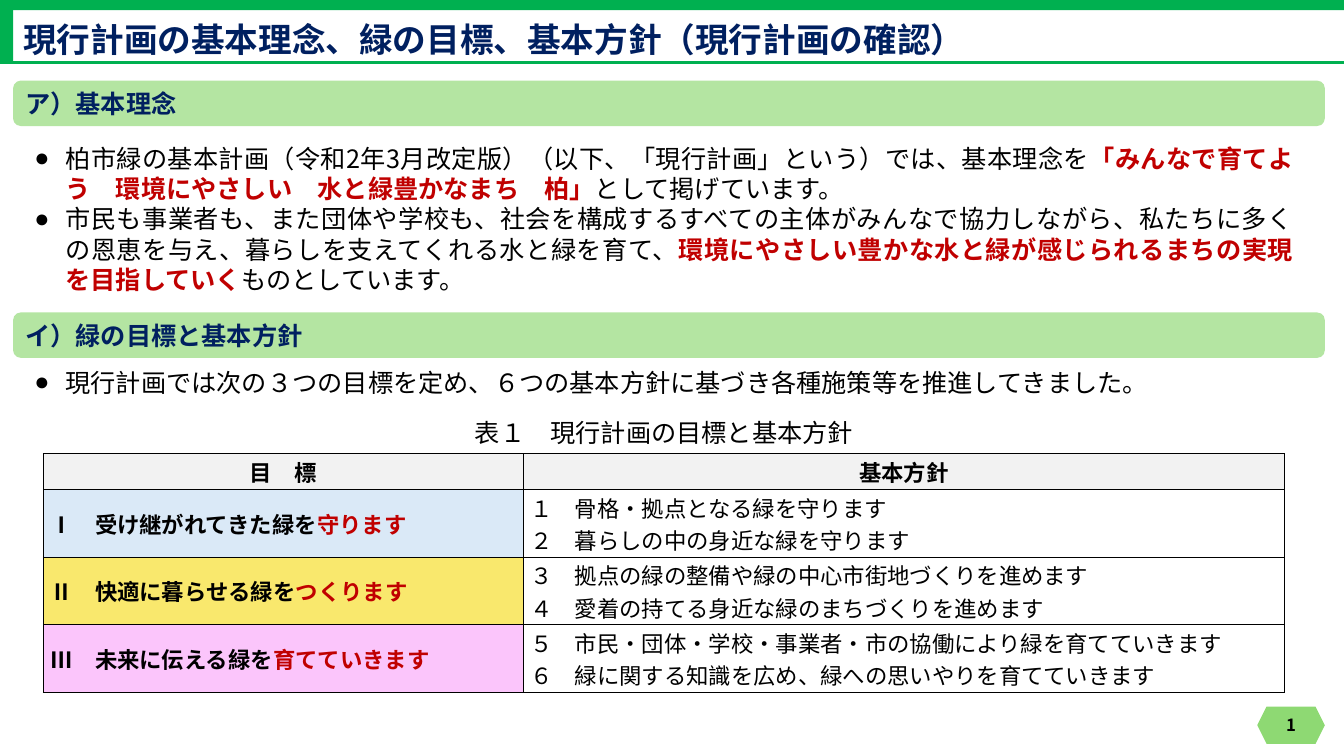
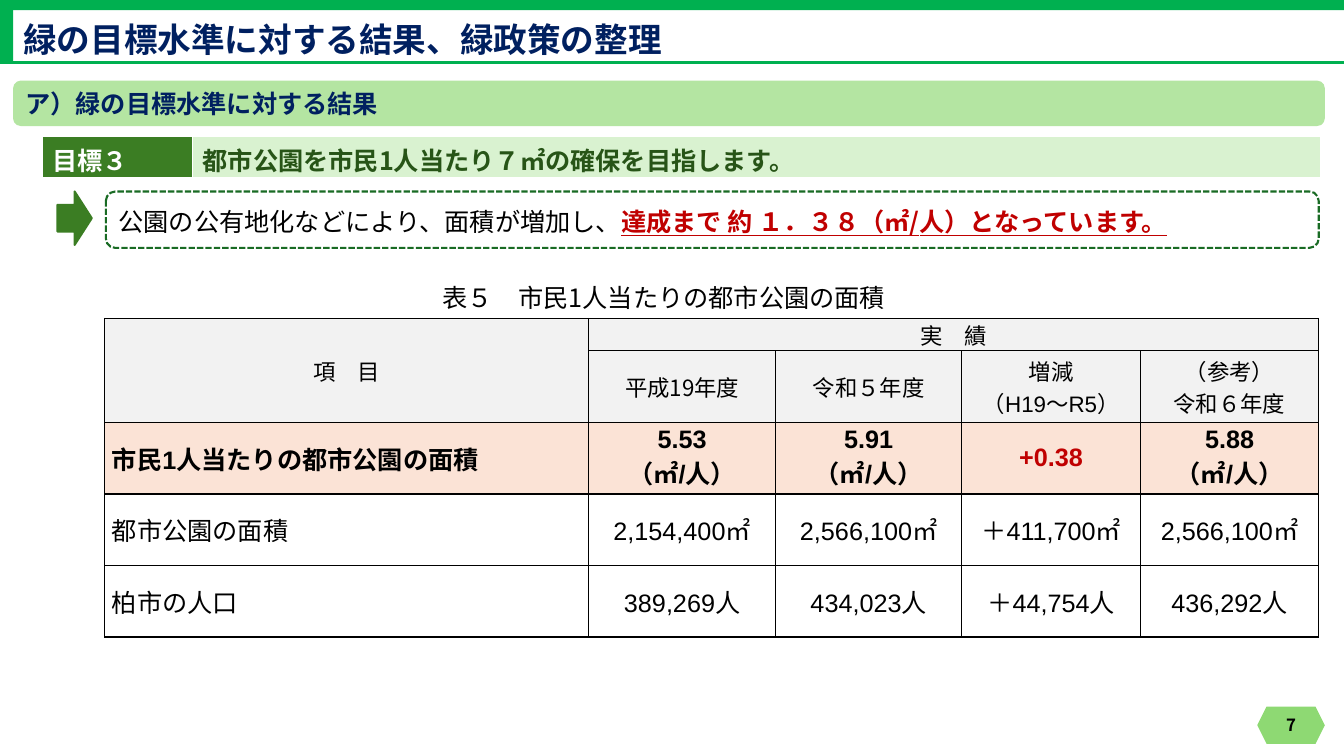
from lxml import etree
from pptx import Presentation
from pptx import util as u
from pptx.dml.color import RGBColor
from pptx.enum import dml, shapes, text
from pptx.oxml.ns import qn

JAPANESE, LATIN = "Noto Sans CJK JP", "Arial"
GREEN, DARK_GREEN, NAVY = "00B050", "3B7D23", "002060"
BLACK, WHITE, RED = "000000", "FFFFFF", "C00000"
PALE_GREEN, GREY, PEACH = "B4E5A2", "F2F2F2", "FBE3D6"
LEFT, CENTER, JUSTIFY = text.PP_ALIGN.LEFT, text.PP_ALIGN.CENTER, text.PP_ALIGN.JUSTIFY
SHAPE = shapes.MSO_SHAPE
rgb = RGBColor.from_string


def write(frame, content, size=18, color=BLACK, bold=False, align=LEFT, latin=JAPANESE):
    """Write one paragraph per line; pieces between bars become red and bold."""
    frame.word_wrap = True
    frame.auto_size = text.MSO_AUTO_SIZE.NONE
    for number, line in enumerate(content.split("\n")):
        paragraph = frame.add_paragraph() if number else frame.paragraphs[0]
        paragraph.alignment = align
        paragraph.space_before = u.Pt(0)
        for position, piece in enumerate(line.split("|")):
            if not piece:
                continue
            emphasis = position % 2 == 1
            run = paragraph.add_run()
            run.text = piece
            run.font.size = u.Pt(size)
            run.font.bold = bold or emphasis
            run.font.color.rgb = rgb(RED if emphasis else color)
            run.font.name = latin
            etree.SubElement(run._r.rPr, qn("a:ea"), typeface=JAPANESE)


def add_grid(slide, box, columns, rows, cells, border=BLACK, margins=(0.07, 0)):
    """Add a table; each cell is (text, fill or None, options for write)."""
    table = slide.shapes.add_table(len(rows), len(columns), *map(u.Inches, box)).table
    table.first_row = table.horz_banding = False
    for column, width in zip(table.columns, columns):
        column.width = u.Inches(width)
    for row, height, row_cells in zip(table.rows, rows, cells):
        row.height = u.Inches(height)
        for cell, (content, fill, options) in zip(row.cells, row_cells):
            cell.margin_left = cell.margin_right = u.Inches(margins[0])
            cell.margin_top, cell.margin_bottom = u.Inches(margins[1]), 0
            cell.vertical_anchor = text.MSO_ANCHOR.MIDDLE
            for side in ("a:lnL", "a:lnR", "a:lnT", "a:lnB"):
                line = etree.SubElement(cell._tc.tcPr, qn(side), w=str(u.Pt(1)))
                solid = etree.SubElement(line, qn("a:solidFill"))
                etree.SubElement(solid, qn("a:srgbClr"), val=border)
            if fill:
                cell.fill.solid()
                cell.fill.fore_color.rgb = rgb(fill)
            else:
                cell.fill.background()
            write(cell.text_frame, content, **options)
    return table


presentation = Presentation()
presentation.slide_width = u.Inches(13.33)
presentation.slide_height = u.Inches(7.5)
TWO_CONTENT, TITLE_ONLY = presentation.slide_layouts[3], presentation.slide_layouts[5]

# Frame shared by the slides: bands, title, page number, section bars
pages = [
    (TWO_CONTENT, "現行計画の基本理念、緑の目標、基本方針（現行計画の確認）", "1",
     [(0.8, "ア）基本理念"), (3.1, "イ）緑の目標と基本方針")],
     (3.25, 4.09, 6.67, 0.4), "表１　現行計画の目標と基本方針"),
    (TITLE_ONLY, "緑の目標水準に対する結果、緑政策の整理", "7",
     [(0.8, "ア）緑の目標水準に対する結果")],
     (2.08, 2.75, 9.01, 0.4), "表５　市民1人当たりの都市公園の面積"),
]
heading = dict(color=NAVY, bold=True)
for layout, title, page_number, sections, caption_box, caption in pages:
    slide = presentation.slides.add_slide(layout)
    holder = slide.shapes.title
    holder.left, holder.top, holder.width, holder.height = map(u.Inches, (0.13, 0.14, 12.9, 0.5))
    holder.text_frame.vertical_anchor = text.MSO_ANCHOR.TOP
    write(holder.text_frame, title, 24, **heading)

    parts = [
        (SHAPE.RECTANGLE, (0, 0, 13.33, 0.1), GREEN, "", {}),
        (SHAPE.RECTANGLE, (0, 0.08, 0.13, 0.54), GREEN, "", {}),
        (SHAPE.HEXAGON, (12.47, 7.01, 0.67, 0.37), "8ED973", page_number,
         dict(size=12, bold=True, align=CENTER)),
    ]
    for top, section in sections:
        parts.append((SHAPE.ROUNDED_RECTANGLE, (0.13, top, 13.01, 0.45), PALE_GREEN, section, heading))
    for kind, box, fill, content, options in parts:
        shape = slide.shapes.add_shape(kind, *map(u.Inches, box))
        shape.shadow.inherit = False
        shape.fill.solid()
        shape.fill.fore_color.rgb = rgb(fill)
        shape.line.fill.background()
        write(shape.text_frame, content, **options)

    rule = slide.shapes.add_connector(
        shapes.MSO_CONNECTOR.STRAIGHT, *map(u.Inches, (0, 0.62, 13.33, 0.62)))
    rule.line.color.rgb = rgb(GREEN)
    rule.line.width = u.Pt(1.5)
    etree.SubElement(rule._element.spPr, qn("a:effectLst"))

    caption_shape = slide.shapes.add_textbox(*map(u.Inches, caption_box))
    write(caption_shape.text_frame, caption, align=CENTER)

policy_slide, result_slide = presentation.slides

# Slide 1: lists
lists = [
    (1, (0.24, 1.37, 12.69, 1.62), JUSTIFY,
     "柏市緑の基本計画（令和2年3月改定版）（以下、「現行計画」という）では、基本理念を"
     "|「みんなで育てよう　環境にやさしい　水と緑豊かなまち　柏」|として掲げています。\n"
     "市民も事業者も、また団体や学校も、社会を構成するすべての主体がみんなで協力しながら、"
     "私たちに多くの恩恵を与え、暮らしを支えてくれる水と緑を育て、"
     "|環境にやさしい豊かな水と緑が感じられるまちの実現を目指していく|ものとしています。"),
    (2, (0.24, 3.59, 11.39, 0.4), LEFT,
     "現行計画では次の３つの目標を定め、６つの基本方針に基づき各種施策等を推進してきました。"),
]
for index, box, align, content in lists:
    holder = policy_slide.placeholders[index]
    holder.left, holder.top, holder.width, holder.height = map(u.Inches, box)
    write(holder.text_frame, content, align=align)
    for paragraph in holder.text_frame.paragraphs:
        properties = paragraph._p.get_or_add_pPr()
        properties.set("marL", str(u.Inches(0.31)))
        properties.set("indent", str(-u.Inches(0.31)))
        etree.SubElement(properties, qn("a:buFont"), typeface=LATIN)
        etree.SubElement(properties, qn("a:buChar"), char="●")

# Slide 1: goals and policies
goals = [
    ("Ⅰ　受け継がれてきた緑を|守ります|", "DAE9F7",
     "１　骨格・拠点となる緑を守ります\n２　暮らしの中の身近な緑を守ります"),
    ("Ⅱ　快適に暮らせる緑を|つくります|", "F9E86D",
     "３　拠点の緑の整備や緑の中心市街地づくりを進めます\n"
     "４　愛着の持てる身近な緑のまちづくりを進めます"),
    ("Ⅲ　未来に伝える緑を|育てていきます|", "FBC5FB",
     "５　市民・団体・学校・事業者・市の協働により緑を育てていきます\n"
     "６　緑に関する知識を広め、緑への思いやりを育てていきます"),
]
plain = dict(size=16, latin=LATIN)
strong = dict(plain, bold=True)
goal_cells = [[(name, GREY, dict(strong, align=CENTER)) for name in ("目　標", "基本方針")]]
goal_cells += [[(goal, fill, strong), (policies, None, plain)] for goal, fill, policies in goals]
add_grid(policy_slide, (0.43, 4.5, 12.31, 2.37), [4.76, 7.55], [0.36] + [0.67] * 3, goal_cells)

# Slide 2: target and result
target_cells = [[
    ("目標３", DARK_GREEN, dict(color=WHITE, bold=True)),
    ("都市公園を市民1人当たり７㎡の確保を目指します。", "D9F2D0", dict(color="275417", bold=True)),
]]
add_grid(result_slide, (0.42, 1.35, 12.68, 0.4), [1.49, 11.19], [0.4], target_cells,
         border=WHITE, margins=(0.1, 0.05))

arrow = result_slide.shapes.add_shape(
    SHAPE.RIGHT_ARROW, *map(u.Inches, (0.57, 1.9, 0.34, 0.53)))
arrow.fill.solid()
arrow.fill.fore_color.rgb = rgb(DARK_GREEN)
result = result_slide.shapes.add_shape(
    SHAPE.ROUNDED_RECTANGLE, *map(u.Inches, (1.05, 1.9, 12.03, 0.56)))
result.fill.background()
for shape, color in ((arrow, DARK_GREEN), (result, "196B24")):
    shape.shadow.inherit = False
    shape.line.color.rgb = rgb(color)
    shape.line.width = u.Pt(1.5)
result.line.dash_style = dml.MSO_LINE.SQUARE_DOT
result.text_frame.margin_top, result.text_frame.margin_bottom = u.Inches(0.12), u.Inches(0.08)
write(result.text_frame,
      "公園の公有地化などにより、面積が増加し、|達成まで 約 １．３８（㎡/人）となっています。|")
result.text_frame.paragraphs[0].runs[1].font.underline = True

# Slide 2: park area per resident
header = dict(size=16, align=CENTER)
area_rows = [
    (["項　目", "実　績", "", "", ""], GREY, header, header),
    (["", "平成19年度", "令和５年度", "増減\n（H19～R5）", "（参考）\n令和６年度"],
     GREY, header, header),
    (["市民1人当たりの都市公園の面積", "5.53\n（㎡/人）", "5.91\n（㎡/人）", "|+0.38|",
      "5.88\n（㎡/人）"],
     PEACH, dict(latin=LATIN, bold=True), dict(latin=LATIN, bold=True, align=CENTER)),
]
area_rows += [
    (values, None, dict(latin=LATIN), dict(latin=LATIN, align=CENTER))
    for values in (
        ["都市公園の面積", "2,154,400㎡", "2,566,100㎡", "＋411,700㎡", "2,566,100㎡"],
        ["柏市の人口", "389,269人", "434,023人", "＋44,754人", "436,292人"],
    )
]
area_cells = [
    [(value, fill, options if position else first)
     for position, value in enumerate(values)]
    for values, fill, first, options in area_rows
]
area_cells[1][3] = (*area_cells[1][3][:2], dict(header, latin=LATIN))
area_table = add_grid(result_slide, (1.04, 3.16, 12.04, 3.1), [4.8, 1.85, 1.85, 1.77, 1.77],
                      [0.26] + [0.71] * 4, area_cells)
area_table.cell(0, 0).merge(area_table.cell(1, 0))
area_table.cell(0, 1).merge(area_table.cell(0, 4))

presentation.save("out.pptx")
